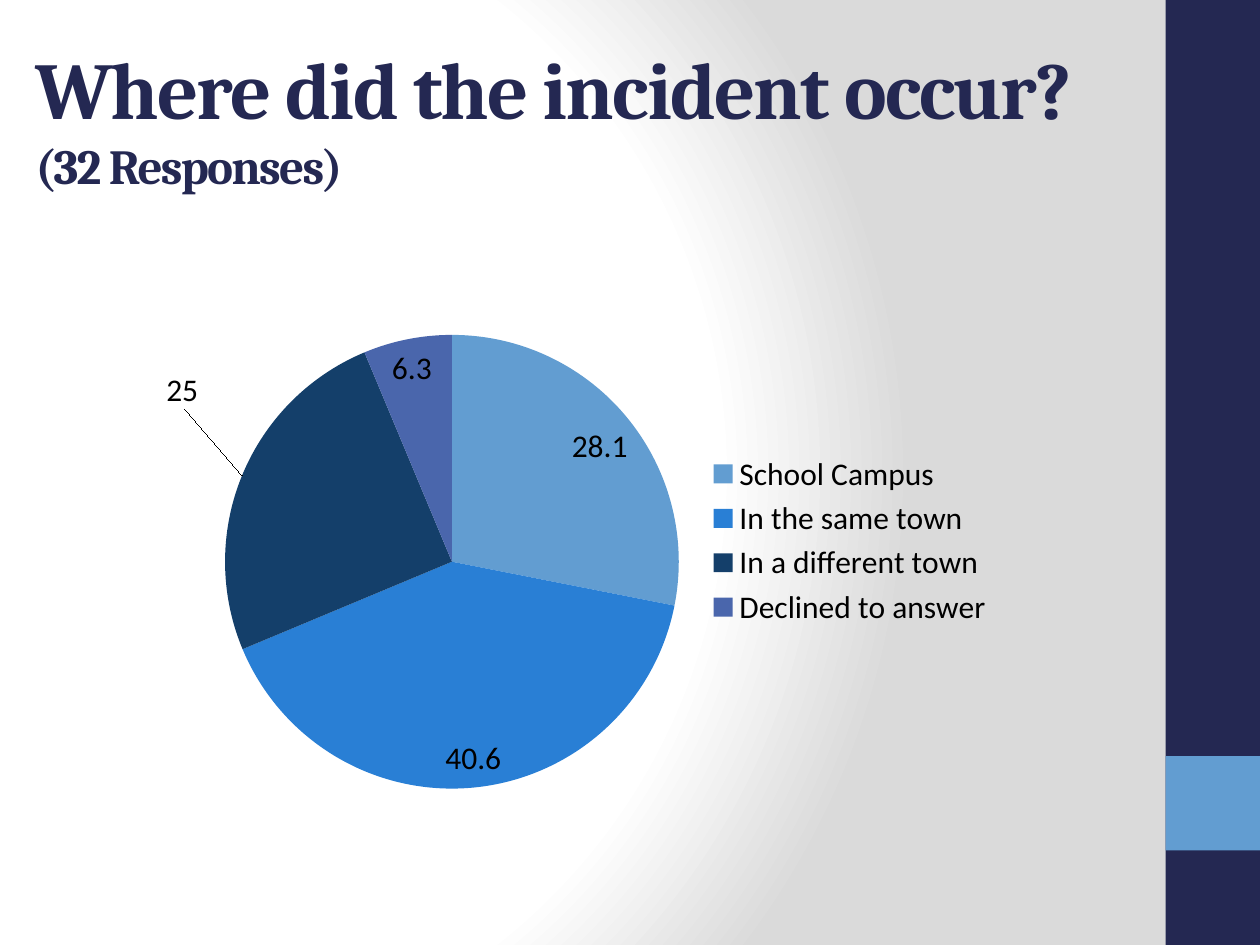
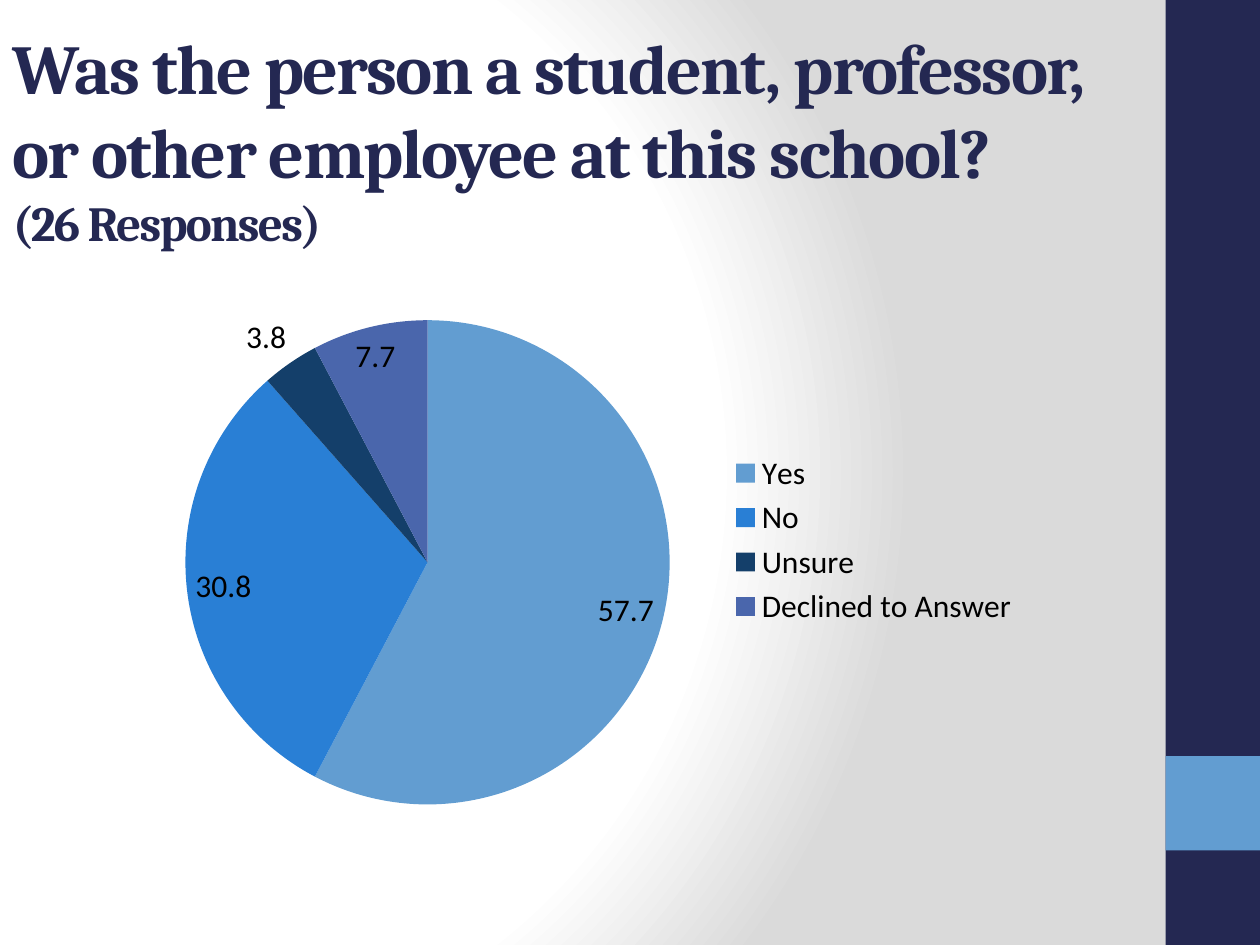
from pptx import Presentation
from pptx.chart.data import CategoryChartData
from pptx.dml.color import RGBColor
from pptx.enum.chart import XL_CHART_TYPE, XL_LABEL_POSITION, XL_LEGEND_POSITION
from pptx.enum.shapes import MSO_SHAPE
from pptx.enum.text import MSO_ANCHOR, MSO_AUTO_SIZE, PP_ALIGN
from pptx.oxml import parse_xml
from pptx.oxml.ns import nsdecls, qn
from pptx.util import Pt

NAVY = RGBColor(0x24, 0x28, 0x52)
SKY = RGBColor(0x62, 0x9D, 0xD1)
BLUE = RGBColor(0x29, 0x7F, 0xD5)
DEEP = RGBColor(0x14, 0x3F, 0x6A)
INDIGO = RGBColor(0x4A, 0x66, 0xAC)
BLACK = RGBColor(0, 0, 0)
SLICES = [SKY, BLUE, DEEP, INDIGO]

GLOW = f"""<a:gradFill {nsdecls('a')} rotWithShape="1"><a:gsLst>
<a:gs pos="0"><a:srgbClr val="FFFFFF"/></a:gs>
<a:gs pos="75000"><a:srgbClr val="FFFFFF"/></a:gs>
<a:gs pos="100000"><a:srgbClr val="DADADA"/></a:gs></a:gsLst>
<a:path path="circle"><a:fillToRect l="20000" t="50000" r="100000" b="50000"/></a:path>
</a:gradFill>"""

# question, size, break before count, count, title box, chart box,
# left edge of pie, answers, moved label (point, x, y)
POLLS = [
    ("Where did the incident occur? ", 46, False, "(32 Responses)",
     (13, 21.6, 625.7, 90), (95, 157, 480.2, 303.8), 0.07,
     {"School Campus": 28.1, "In the same town": 40.6,
      "In a different town": 25, "Declined to answer": 6.3},
     (2, -0.06, -0.12)),
    ("Was the person a student, professor, or other employee at this school? ",
     40, True, "(26 Responses)",
     (0, 33.8, 648, 90), (74.2, 147.6, 515.5, 321.8), 0.06,
     {"Yes": 57.7, "No": 30.8, "Unsure": 3.8, "Declined to Answer": 7.7},
     None),
]


def layout(**parts):
    """Return a manual chart layout; parts are fractions of the chart."""
    tags = "".join(f'<c:{tag} val="{val}"/>' for tag, val in parts.items())
    return parse_xml(f"<c:layout {nsdecls('c')}><c:manualLayout>{tags}"
                     "</c:manualLayout></c:layout>")


deck = Presentation()
deck.slide_width, deck.slide_height = Pt(720), Pt(540)
master = deck.slide_master
title_only = deck.slide_layouts[5]

# Shared background
master.background.fill.solid()
solid = master.element.find(".//" + qn("p:bgPr")).find(qn("a:solidFill"))
solid.getparent().replace(solid, parse_xml(GLOW))

slides = [deck.slides.add_slide(title_only) for poll in POLLS]

# Shared side bands, moved to the back of the master
for depth, (top, height, color) in enumerate([(0, 540, NAVY), (432, 54, SKY)]):
    band = slides[0].shapes.add_shape(
        MSO_SHAPE.RECTANGLE, Pt(666), Pt(top), Pt(54), Pt(height))
    band.shadow.inherit = False
    band.fill.solid()
    band.fill.fore_color.rgb = color
    band.line.fill.background()
    master.shapes.element.insert(2 + depth, band.element)

for slide, poll in zip(slides, POLLS):
    question, size, split, count, head_box, pie_box, left, answers, moved = poll

    title = slide.shapes.title
    title.left, title.top, title.width, title.height = map(Pt, head_box)
    frame = title.text_frame
    frame.word_wrap = True
    frame.auto_size = MSO_AUTO_SIZE.NONE
    frame.vertical_anchor = MSO_ANCHOR.MIDDLE
    para = frame.paragraphs[0]
    para.alignment = PP_ALIGN.LEFT
    para.font.name = "Cambria"
    para.font.bold = True
    para.font.color.rgb = NAVY
    for text, points in [(question, size), (count, 28)]:
        if split and text == count:
            para.add_line_break()
        run = para.add_run()
        run.text = text
        run.font.size = Pt(points)
    for props in title.element.iter(qn("a:defRPr"), qn("a:rPr")):
        props.set("spc", "-100")

    data = CategoryChartData()
    data.categories = list(answers)
    data.add_series("Series 1", list(answers.values()))
    chart = slide.shapes.add_chart(
        XL_CHART_TYPE.PIE, *map(Pt, pie_box), data).chart
    chart.has_title = False
    chart.font.name = "Calibri"
    chart.font.size = Pt(18)
    chart.font.color.rgb = BLACK
    chart.has_legend = True
    chart.legend.position = XL_LEGEND_POSITION.RIGHT
    chart.legend.include_in_layout = False

    plot = chart.plots[0]
    plot.vary_by_categories = True
    series = plot.series[0]
    for index, color in enumerate(SLICES):
        fill = series.points[index].format.fill
        fill.solid()
        fill.fore_color.rgb = color
    labels = series.data_labels
    labels.show_value = True
    labels.show_percentage = False
    labels.position = XL_LABEL_POSITION.BEST_FIT

    area = chart.element.find(".//" + qn("c:plotArea"))
    for old in area.findall(qn("c:layout")):
        area.remove(old)
    area.insert(0, layout(layoutTarget="inner", xMode="edge", yMode="edge",
                          x=left, y=0.11, w=0.54, h=0.86))
    if moved:
        point, across, down = moved
        series.points[point].data_label.position = XL_LABEL_POSITION.BEST_FIT
        label = chart.element.find(".//" + qn("c:dLbl"))
        label.insert(1, layout(x=across, y=down))

deck.save("out.pptx")
